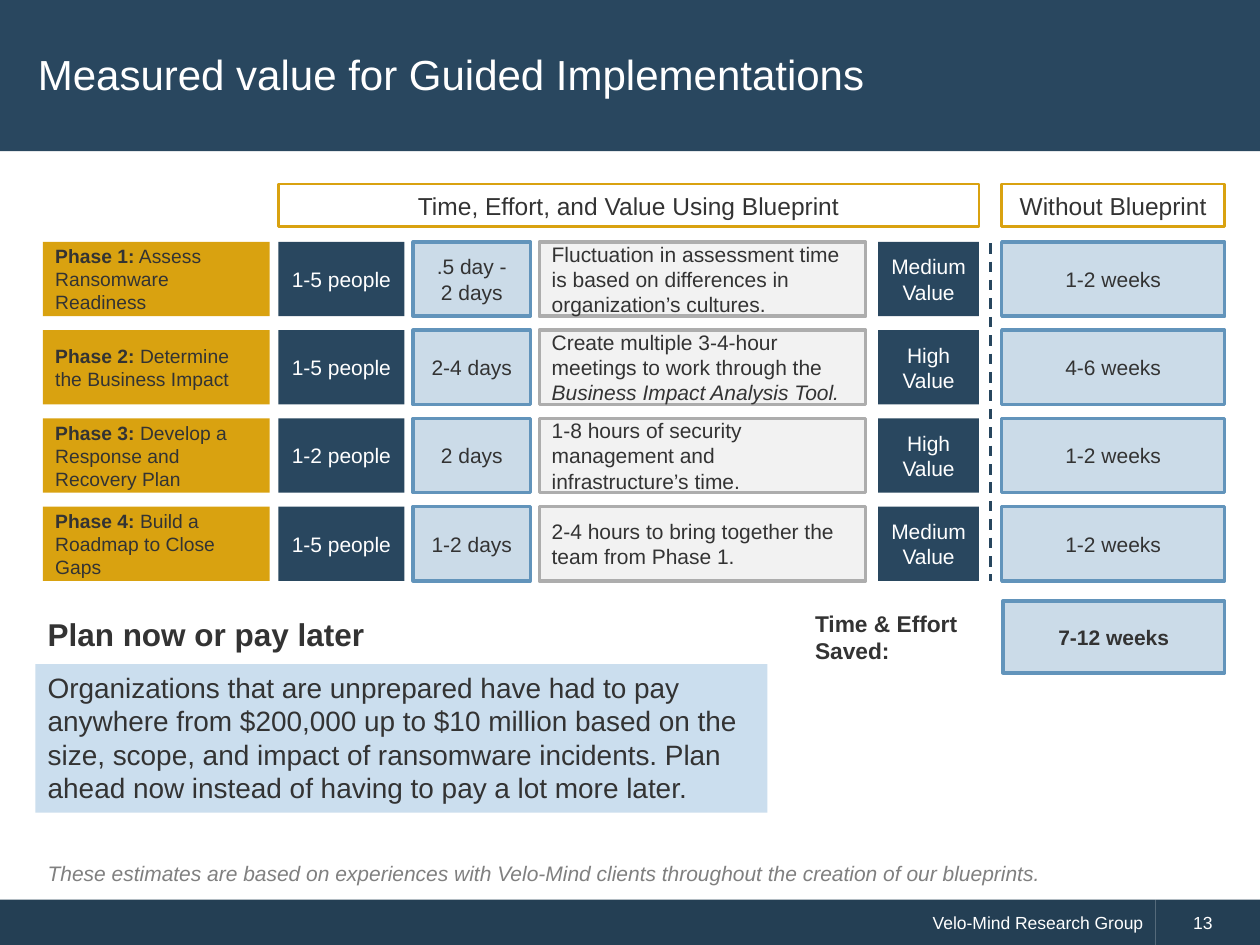
from dataclasses import dataclass

from lxml import etree
from pptx import Presentation
from pptx.dml.color import RGBColor
from pptx.enum.dml import MSO_LINE
from pptx.enum.shapes import MSO_CONNECTOR, MSO_SHAPE
from pptx.enum.text import MSO_ANCHOR, MSO_AUTO_SIZE, PP_ALIGN
from pptx.oxml.ns import qn
from pptx.util import Pt

EMU_PER_PX = 9144
RECTANGLE = MSO_SHAPE.RECTANGLE
STRAIGHT = MSO_CONNECTOR.STRAIGHT
DASH = MSO_LINE.DASH
LEFT, CENTER, RIGHT = PP_ALIGN.LEFT, PP_ALIGN.CENTER, PP_ALIGN.RIGHT
TOP, MIDDLE = MSO_ANCHOR.TOP, MSO_ANCHOR.MIDDLE
NO_AUTOFIT = MSO_AUTO_SIZE.NONE


@dataclass(frozen=True)
class Theme:
    font: str = "Arial"
    navy: str = "29475F"
    footer: str = "243F54"
    divider: str = "27465E"
    gold: str = "D9A210"
    pale: str = "CBDBE8"
    blue: str = "6294BB"
    callout: str = "CBDEEE"
    light: str = "F2F2F2"
    gray: str = "ADADAD"
    note: str = "808080"
    ink: str = "333333"
    white: str = "FFFFFF"
    title: int = 24
    heading: int = 18
    lead: int = 16
    header: int = 14
    saved: int = 13
    cell: int = 12
    phase: int = 11
    small: int = 10


def px(length):
    return length * EMU_PER_PX


def apply(target, values):
    for name, value in values.items():
        setattr(target, name, value)


class SlideBuilder:
    def __init__(self, slide, theme):
        self.slide = slide
        self.theme = theme

    def fill_text(self, shape, runs, size, color, align=LEFT, anchor=MIDDLE, indent=0):
        frame = shape.text_frame
        apply(frame, {
            "word_wrap": True, "auto_size": NO_AUTOFIT, "vertical_anchor": anchor,
            "margin_left": px(10 + indent), "margin_right": px(10),
            "margin_top": px(5), "margin_bottom": px(5),
        })
        paragraph = frame.paragraphs[0]
        paragraph.alignment = align
        for text, style in runs:
            for index, line in enumerate(text.split("\n")):
                if index:
                    paragraph.add_line_break()
                run = paragraph.add_run()
                run.text = line
                apply(run.font, {"name": self.theme.font, "size": Pt(size),
                                 "bold": False, "italic": False, **style})
                run.font.color.rgb = RGBColor.from_string(color)

    def title(self, text, box):
        title = self.slide.shapes.title
        title.element.addprevious(self.box(box, self.theme.navy).element)
        apply(title, dict(zip(("left", "top", "width", "height"), map(px, box))))
        self.fill_text(title, [(text, {})], self.theme.title, self.theme.white, indent=20)

    def box(self, box, fill=None, line=None, width=2):
        shape = self.slide.shapes.add_shape(RECTANGLE, *map(px, box))
        shape.shadow.inherit = False
        if fill:
            shape.fill.solid()
            shape.fill.fore_color.rgb = RGBColor.from_string(fill)
        else:
            shape.fill.background()
        if line:
            shape.line.color.rgb = RGBColor.from_string(line)
            shape.line.width = Pt(width)
        else:
            shape.line.fill.background()
        return shape

    def text(self, text, box, size, color, **style):
        shape = self.slide.shapes.add_textbox(*map(px, box))
        self.fill_text(shape, [(text, style)], size, color, anchor=TOP)

    def dashed_line(self, x, top, bottom):
        line = self.slide.shapes.add_connector(STRAIGHT, px(x), px(top), px(x), px(bottom))
        line.line.color.rgb = RGBColor.from_string(self.theme.divider)
        apply(line.line, {"width": Pt(1.5), "dash_style": DASH})
        etree.SubElement(line.element.spPr, qn("a:effectLst"))


def add_phase_grid(builder):
    theme = builder.theme
    bold, italic = {"bold": True}, {"italic": True}
    columns = [
        (34, 180, theme.gold, None, theme.phase, theme.ink, LEFT),
        (221, 100, theme.navy, None, theme.cell, theme.white, CENTER),
        (328, 93, theme.pale, theme.blue, theme.cell, theme.ink, CENTER),
        (428, 259, theme.light, theme.gray, theme.cell, theme.ink, LEFT),
        (697, 80, theme.navy, None, theme.cell, theme.white, CENTER),
        (795, 177, theme.pale, theme.blue, theme.cell, theme.ink, CENTER),
    ]
    phases = [
        ("Assess Ransomware Readiness", "1-5 people", ".5 day -\n2 days",
         "Fluctuation in assessment time is based on differences in organization’s cultures.",
         "", "Medium Value", "1-2 weeks"),
        ("Determine the Business Impact", "1-5 people", "2-4 days",
         "Create multiple 3-4-hour meetings to work through the ",
         "Business Impact Analysis Tool.", "High Value", "4-6 weeks"),
        ("Develop a Response and Recovery Plan", "1-2 people", "2 days",
         "1-8 hours of security management and infrastructure’s time.",
         "", "High Value", "1-2 weeks"),
        ("Build a Roadmap to Close Gaps", "1-5 people", "1-2 days",
         "2-4 hours to bring together the team from Phase 1.",
         "", "Medium Value", "1-2 weeks"),
    ]
    for row, (name, people, days, effort, tool, value, without) in enumerate(phases):
        effort_runs = [(effort, {})] + ([(tool, italic)] if tool else [])
        cells = [
            [(f"Phase {row + 1}:", bold), (f" {name}", {})],
            [(people, {})], [(days, {})], effort_runs, [(value, {})], [(without, {})],
        ]
        for runs, (left, width, fill, line, size, color, align) in zip(cells, columns):
            shape = builder.box((left, 192 + 70 * row, width, 59), fill, line)
            builder.fill_text(shape, runs, size, color, align)


def main():
    presentation = Presentation()
    apply(presentation, {"slide_width": px(1000), "slide_height": px(750)})
    slide = presentation.slides.add_slide(presentation.slide_layouts[5])
    theme = Theme()
    builder = SlideBuilder(slide, theme)

    footer = builder.box((0, 714, 917, 37), theme.footer)
    builder.fill_text(footer, [("Velo-Mind Research Group", {})],
                      theme.small, theme.white, RIGHT)
    number = builder.box((917, 714, 83, 37), theme.footer)
    builder.fill_text(number, [("13", {})], theme.small, theme.white, indent=20)
    builder.title("Measured value for Guided Implementations", (0, -3, 1000, 123))

    for text, left, width in (("Time, Effort, and Value Using Blueprint", 221, 556),
                              ("Without Blueprint", 795, 177)):
        header = builder.box((left, 146, width, 34), line=theme.gold, width=1.5)
        builder.fill_text(header, [(text, {})], theme.header, theme.ink, CENTER)

    add_phase_grid(builder)
    builder.dashed_line(786, 193, 461)

    builder.text("Time & Effort Saved:", (637, 479, 149, 54), theme.saved, theme.ink, bold=True)
    saved = builder.box((796, 477, 176, 57), theme.pale, theme.blue)
    builder.fill_text(saved, [("7-12 weeks", {"bold": True})], theme.cell, theme.ink, CENTER)

    builder.text("Plan now or pay later", (28, 483, 294, 40), theme.heading, theme.ink, bold=True)
    callout = builder.box((28, 527, 581, 118), theme.callout)
    builder.fill_text(callout, [(
        "Organizations that are unprepared have had to pay anywhere from $200,000 up to "
        "$10 million based on the size, scope, and impact of ransomware incidents. Plan "
        "ahead now instead of having to pay a lot more later.", {})],
        theme.lead, theme.ink, anchor=TOP)
    builder.text("These estimates are based on experiences with Velo-Mind clients "
                 "throughout the creation of our blueprints.",
                 (28, 678, 956, 30), theme.cell, theme.note, italic=True)

    presentation.save("out.pptx")


if __name__ == "__main__":
    main()
